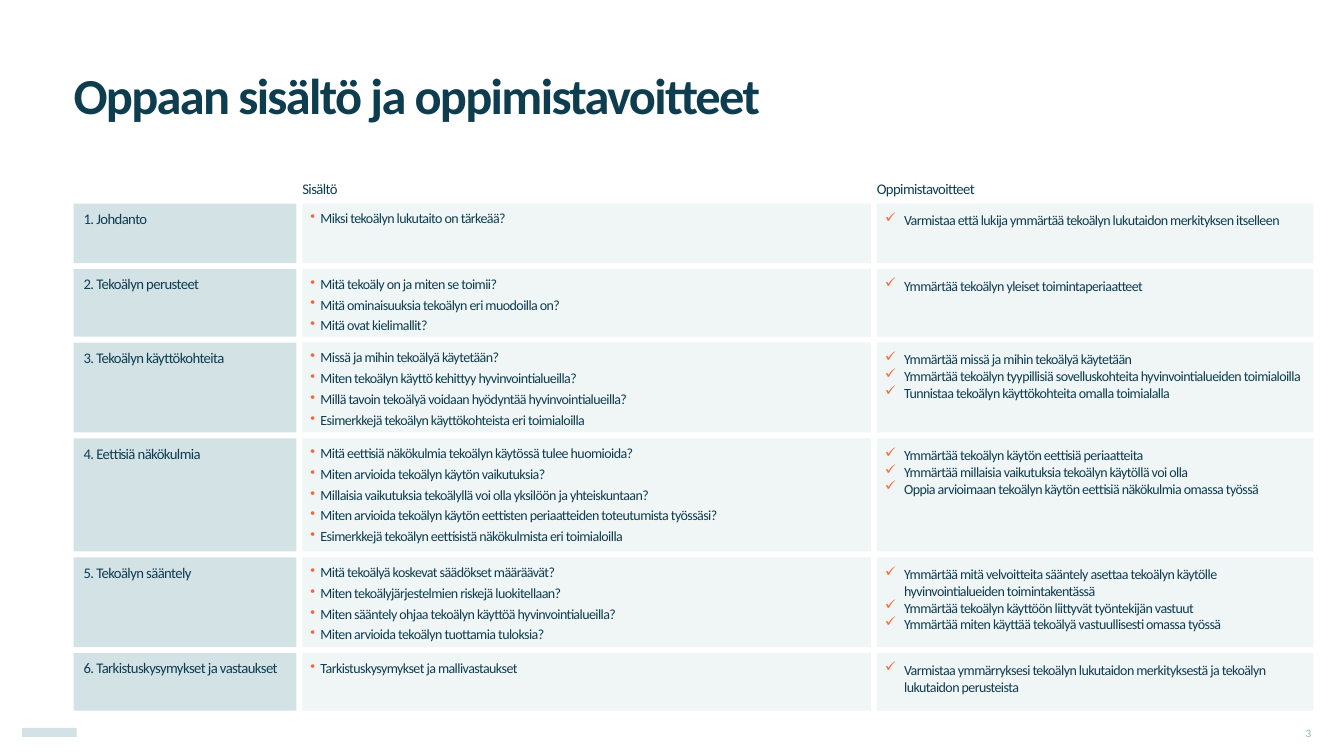
from lxml.etree import SubElement
from pptx import Presentation
from pptx.dml.color import RGBColor
from pptx.enum.shapes import MSO_SHAPE
from pptx.enum.text import MSO_ANCHOR, MSO_AUTO_SIZE, PP_ALIGN
from pptx.oxml.ns import qn
from pptx.util import Emu, Inches, Pt

# Content
TITLE = "Oppaan sisältö ja oppimistavoitteet"
HEADINGS = [None, "Sisältö", "Oppimistavoitteet"]
PAGE_NUMBER = "3"
CHAPTERS = [
    ("1. Johdanto",
     ["Miksi tekoälyn lukutaito on tärkeää?"],
     ["Varmistaa että lukija ymmärtää tekoälyn lukutaidon merkityksen itselleen"]),
    ("2. Tekoälyn perusteet",
     ["Mitä tekoäly on ja miten se toimii?",
      "Mitä ominaisuuksia tekoälyn eri muodoilla on?",
      "Mitä ovat kielimallit?"],
     ["Ymmärtää tekoälyn yleiset toimintaperiaatteet"]),
    ("3. Tekoälyn käyttökohteita",
     ["Missä ja mihin tekoälyä käytetään?",
      "Miten tekoälyn käyttö kehittyy hyvinvointialueilla?",
      "Millä tavoin tekoälyä voidaan hyödyntää hyvinvointialueilla?",
      "Esimerkkejä tekoälyn käyttökohteista eri toimialoilla"],
     ["Ymmärtää missä ja mihin tekoälyä käytetään",
      "Ymmärtää tekoälyn tyypillisiä sovelluskohteita hyvinvointialueiden toimialoilla",
      "Tunnistaa tekoälyn käyttökohteita omalla toimialalla"]),
    ("4. Eettisiä näkökulmia",
     ["Mitä eettisiä näkökulmia tekoälyn käytössä tulee huomioida?",
      "Miten arvioida tekoälyn käytön vaikutuksia?",
      "Millaisia vaikutuksia tekoälyllä voi olla yksilöön ja yhteiskuntaan?",
      "Miten arvioida tekoälyn käytön eettisten periaatteiden toteutumista työssäsi?",
      "Esimerkkejä tekoälyn eettisistä näkökulmista eri toimialoilla"],
     ["Ymmärtää tekoälyn käytön eettisiä periaatteita",
      "Ymmärtää millaisia vaikutuksia tekoälyn käytöllä voi olla",
      "Oppia arvioimaan tekoälyn käytön eettisiä näkökulmia omassa työssä"]),
    ("5. Tekoälyn sääntely",
     ["Mitä tekoälyä koskevat säädökset määräävät?",
      "Miten tekoälyjärjestelmien riskejä luokitellaan?",
      "Miten sääntely ohjaa tekoälyn käyttöä hyvinvointialueilla?",
      "Miten arvioida tekoälyn tuottamia tuloksia?"],
     ["Ymmärtää mitä velvoitteita sääntely asettaa tekoälyn käytölle "
      "hyvinvointialueiden toimintakentässä",
      "Ymmärtää tekoälyn käyttöön liittyvät työntekijän vastuut",
      "Ymmärtää miten käyttää tekoälyä vastuullisesti omassa työssä"]),
    ("6. Tarkistuskysymykset ja vastaukset",
     ["Tarkistuskysymykset ja mallivastaukset"],
     ["Varmistaa ymmärryksesi tekoälyn lukutaidon merkityksestä ja tekoälyn "
      "lukutaidon perusteista"]),
]

# Grid, in inches
LEFT, TOP, GAP = 0.73, 2.02, 0.06
COLUMN_WIDTHS = [2.21, 5.64, 4.33]
ROW_HEIGHTS = [0.59, 0.67, 0.89, 1.12, 0.89, 0.57]
HEADING_HEIGHT = 0.31

# Formats
COLORS = {"ink": "0E3D50", "chapter": "D3E2E5", "cell": "F0F5F5",
          "bullet": "F7663A", "page": "92B1B8", "mark": "D3E3E5"}
STYLES = {
    "title": {"size": 36, "bold": True, "tracking": -1.2, "paragraph": {"line_spacing": 0.9}},
    "heading": {"size": 10.5, "tracking": -0.4, "paragraph": {"line_spacing": 1.1}},
    "page": {"size": 8, "color": "page", "paragraph": {"alignment": PP_ALIGN.RIGHT}},
    "chapter": {"size": 10.5, "tracking": -0.4, "margin": 0.1,
                "paragraph": {"line_spacing": 0.9}},
    "contents": {"size": 10, "tracking": -0.4, "margin": 0.1, "bullet": "•",
                 "paragraph": {"line_spacing": 0.9, "space_after": Pt(4)}},
    "goals": {"size": 10, "tracking": -0.4, "margin": 0.19, "bullet": "✓",
              "paragraph": {"line_spacing": 1.0}},
}
COLUMN_FORMATS = [("chapter", "chapter", (0, 0.08, 0, 0)),
                  ("contents", "cell", (0.08,) * 4),
                  ("goals", "cell", (0.08,) * 4)]


def color(name):
    return RGBColor.from_string(COLORS[name])


def starts(first, lengths):
    return [first + sum(lengths[:i]) + GAP * i for i in range(len(lengths))]


def add_bullet(properties, character):
    bullet_color = SubElement(properties, qn("a:buClr"))
    SubElement(bullet_color, qn("a:srgbClr")).set("val", COLORS["bullet"])
    SubElement(properties, qn("a:buChar")).set("char", character)


def write(shape, lines, style_name, insets=(0, 0, 0, 0), anchor=MSO_ANCHOR.MIDDLE):
    style = STYLES[style_name]
    frame = shape.text_frame
    sides = ("margin_left", "margin_top", "margin_right", "margin_bottom")
    frame_format = dict(zip(sides, map(Inches, insets)), word_wrap=True,
                        auto_size=MSO_AUTO_SIZE.NONE, vertical_anchor=anchor)
    for name, value in frame_format.items():
        setattr(frame, name, value)
    for index, line in enumerate(lines):
        paragraph = frame.add_paragraph() if index else frame.paragraphs[0]
        properties = paragraph._p.get_or_add_pPr()
        margin = Inches(style.get("margin", 0))
        properties.set("marL", str(margin))
        if "bullet" in style:
            properties.set("indent", str(-margin))
            add_bullet(properties, style["bullet"])
        paragraph_format = {"alignment": PP_ALIGN.LEFT, **style["paragraph"]}
        for name, value in paragraph_format.items():
            setattr(paragraph, name, value)
        run = paragraph.add_run()
        run.text = line
        font_format = {"name": "Calibri", "size": Pt(style["size"]),
                       "bold": style.get("bold", False)}
        for name, value in font_format.items():
            setattr(run.font, name, value)
        run.font.color.rgb = color(style.get("color", "ink"))
        tracking = round(style.get("tracking", 0) * 100)
        run._r.get_or_add_rPr().set("spc", str(tracking))


def add_block(slide, box, fill):
    shape = slide.shapes.add_shape(MSO_SHAPE.RECTANGLE, *map(Inches, box))
    shape.shadow.inherit = False
    shape.fill.solid()
    shape.fill.fore_color.rgb = color(fill)
    shape.line.fill.background()
    return shape


def add_label(slide, box, text, style_name):
    write(slide.shapes.add_textbox(*map(Inches, box)), [text], style_name)


def main():
    presentation = Presentation()
    presentation.slide_width, presentation.slide_height = Emu(12192000), Inches(7.5)
    slide = presentation.slides.add_slide(presentation.slide_layouts[5])

    # Title
    title = slide.shapes.title
    title_box = {"left": LEFT, "top": 0.38, "width": 9.84, "height": 1.18}
    for name, value in title_box.items():
        setattr(title, name, Inches(value))
    write(title, [TITLE], "title")

    # Column headings
    columns = list(zip(starts(LEFT, COLUMN_WIDTHS), COLUMN_WIDTHS))
    for (left, width), heading in zip(columns, HEADINGS):
        if heading:
            box = (left, TOP - HEADING_HEIGHT, width, HEADING_HEIGHT)
            add_label(slide, box, heading, "heading")

    # Chapter grid
    for top, height, (chapter, contents, goals) in zip(
            starts(TOP, ROW_HEIGHTS), ROW_HEIGHTS, CHAPTERS):
        cells = zip(columns, ([chapter], contents, goals), COLUMN_FORMATS)
        for (left, width), lines, (style_name, fill, insets) in cells:
            block = add_block(slide, (left, top, width, height), fill)
            write(block, lines, style_name, insets, MSO_ANCHOR.TOP)

    # Footer
    add_block(slide, (0.22, 7.22, 0.54, 0.09), "mark")
    add_label(slide, (12.57, 7.17, 0.44, 0.2), PAGE_NUMBER, "page")

    presentation.save("out.pptx")


if __name__ == "__main__":
    main()
